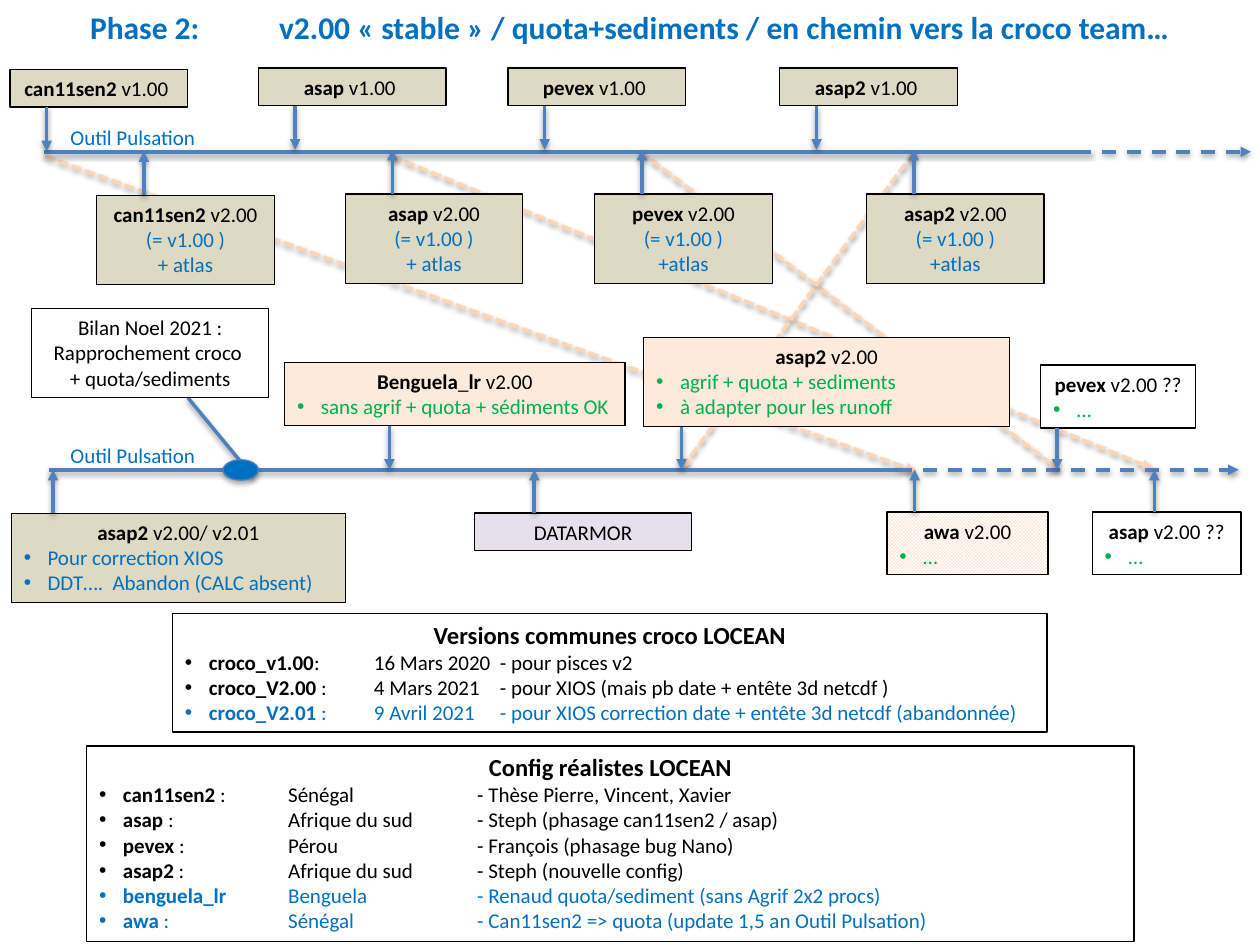
from lxml import etree
from pptx import Presentation
from pptx.dml.color import RGBColor
from pptx.enum import dml, shapes, text
from pptx.oxml import ns
from pptx.util import Cm, Pt

BLACK, BLUE, GREEN, WHITE = "000000", "0070C0", "00B050", "FFFFFF"
AXIS, PEACH, CREAM, SAND, LILAC = "4F81BD", "FCD5B5", "FDEADA", "DDD9C3", "E6E0EC"
INDENT = Cm(0.48)


def colour(value):
    return RGBColor.from_string(value)


def add_element(parent, tag, **attributes):
    return etree.SubElement(parent, ns.qn(tag), attributes)


def add_para(frame, runs, tint=BLACK, size=12, bullet=False, align=None):
    para = frame.paragraphs[0]
    if para.runs:
        para = frame.add_paragraph()
    para.alignment = align or text.PP_ALIGN.LEFT
    if bullet:
        properties = para._p.get_or_add_pPr()
        properties.set("marL", str(INDENT))
        properties.set("indent", str(-INDENT))
        add_element(properties, "a:buFont", typeface="Arial")
        add_element(properties, "a:buChar", char="•")
    for words, bold in runs:
        span = para.add_run()
        span.text = words
        span.font.name = "Calibri"
        span.font.size = Pt(size)
        span.font.bold = bold
        span.font.color.rgb = colour(tint)


def add_centred(frame, runs, tint=BLACK, size=12):
    add_para(frame, runs, tint, size, align=text.PP_ALIGN.CENTER)


def add_box(page, left, top, width, height, fill=None, alpha=None):
    box = page.shapes.add_shape(
        shapes.MSO_SHAPE.RECTANGLE, Cm(left), Cm(top), Cm(width), Cm(height))
    box.shadow.inherit = False
    box.line.color.rgb = colour(BLACK)
    box.line.width = Pt(0.75)
    if fill:
        box.fill.solid()
        box.fill.fore_color.rgb = colour(fill)
    else:
        box.fill.background()
    if alpha:
        shade = box._element.spPr.find(ns.qn("a:solidFill"))[0]
        add_element(shade, "a:alpha", val=str(alpha * 1000))
    box.text_frame.vertical_anchor = text.MSO_ANCHOR.TOP
    return box


def add_line(page, start, end, tint=AXIS, dash=None, arrow=True):
    line = page.shapes.add_connector(
        shapes.MSO_CONNECTOR.STRAIGHT, Cm(start[0]), Cm(start[1]), Cm(end[0]), Cm(end[1]))
    line.line.color.rgb = colour(tint)
    line.line.width = Pt(2)
    if dash:
        line.line.dash_style = dash
    if arrow:
        add_element(line.line._get_or_add_ln(), "a:tailEnd", type="triangle")


def add_label(page, left, top, width, height):
    box = page.shapes.add_textbox(Cm(left), Cm(top), Cm(width), Cm(height))
    box.text_frame.word_wrap = True
    return box.text_frame


def add_title(page, left, top, width, height):
    frame = add_label(page, left, top, width, height)
    frame.vertical_anchor = text.MSO_ANCHOR.MIDDLE
    words = "Phase 2:\t\tv2.00 «\u00a0stable\u00a0» / quota+sediments / en chemin vers la croco team…"
    add_centred(frame, [(words, True)], BLUE, 18)


def add_axis(page, left, top, solid, gap, dashed):
    add_line(page, (left, top), (left + solid, top), arrow=False)
    start = left + solid + gap
    add_line(page, (start, top), (start + dashed, top), dash=dml.MSO_LINE.DASH)
    frame = add_label(page, 1.17, top - 0.68, 3.05, 0.76)
    add_para(frame, [("Outil Pulsation", False)], BLUE)


def add_version_pair(page, left, top, width, name, atlas):
    first = add_box(page, left, top, width, 0.76, SAND)
    add_centred(first.text_frame, [(name, True), (" v1.00 ", False)])
    second = add_box(page, left + 1.75, top + 2.54, 3.58, 1.8, SAND)
    add_centred(second.text_frame, [(name, True), (" v2.00", False)])
    for words in ("(= v1.00 )", atlas):
        add_centred(second.text_frame, [(words, False)], BLUE)
    add_line(page, (left + 0.74, top + 0.76), (left + 0.74, top + 1.65))
    add_line(page, (left + 2.7, top + 2.54), (left + 2.7, top + 1.65))


def add_step(page, left, top, width, height, fill, heading, bullets, tint, arrow_x, axis_y):
    box = add_box(page, left, top, width, height, fill)
    add_centred(box.text_frame, heading)
    for words in bullets:
        add_para(box.text_frame, [(words, False)], tint, bullet=True)
    edge = top if top > axis_y else top + height
    add_line(page, (arrow_x, edge), (arrow_x, axis_y))
    return box


def add_lower_timeline(page, left, top):
    add_axis(page, left, top, 17.12, 0, 6.86)
    v2 = (" v2.00", False)
    doubtful = (" v2.00 ??", False)
    steps = [
        (4.75, -2.16, 6.86, 1.27, CREAM,
         [("Benguela", True), ("_", False), ("lr", True), v2],
         ["sans agrif + quota + sédiments OK"], GREEN, 6.86),
        (11.99, -2.67, 7.37, 1.8, CREAM, [("asap2", True), v2],
         ["agrif + quota + sediments", "à adapter pour les runoff"], GREEN, 12.75),
        (8.58, 0.87, 4.37, 0.76, LILAC, [("DATARMOR", False)], [], GREEN, 9.78),
        (-0.76, 0.88, 6.73, 1.8, SAND, [("asap2", True), (" v2.00/ v2.01", False)],
         ["Pour correction XIOS", "DDT….  Abandon (CALC absent)"], BLUE, 0.08),
        (21.03, 0.85, 3, 1.27, None, [("asap", True), doubtful], ["…"], GREEN, 22.28),
        (19.99, -2.11, 3.12, 1.27, WHITE, [("pevex", True), doubtful], ["…"], GREEN, 20.32),
    ]
    for x, y, width, height, fill, heading, bullets, tint, arrow_x in steps:
        add_step(page, left + x, top + y, width, height, fill,
                 heading, bullets, tint, left + arrow_x, top)
    awa = add_step(page, left + 16.89, top + 0.85, 3.25, 1.27, WHITE,
                   [("awa", True), v2], ["…"], GREEN, left + 17.45, top)
    awa.fill.patterned()
    awa.fill.pattern = dml.MSO_PATTERN.SMALL_CHECKER_BOARD
    awa.fill.fore_color.rgb = colour(PEACH)
    awa.fill.back_color.rgb = colour(WHITE)


def add_review(page, left, top):
    add_line(page, (left + 4.47, top + 3.4), (left + 3.15, top + 1.8), arrow=False)
    marker = page.shapes.add_shape(
        shapes.MSO_SHAPE.OVAL, Cm(left + 3.86), Cm(top + 3.05), Cm(0.71), Cm(0.41))
    marker.fill.solid()
    marker.fill.fore_color.rgb = colour(BLUE)
    marker.line.color.rgb = colour("4B7EBC")
    marker.line.width = Pt(0.75)
    box = add_box(page, left, top, 4.78, 1.8, WHITE, 64)
    for words in ("Bilan Noel 2021 :", "Rapprochement croco ", "+ quota/sediments"):
        add_centred(box.text_frame, [(words, False)])


def add_panel(page, left, top, width, height, heading, rows):
    box = add_box(page, left, top, width, height, WHITE, 64)
    add_centred(box.text_frame, [(heading, True)], size=14)
    for name, details, tint in rows:
        add_para(box.text_frame, [(name, True), (details, False)], tint, bullet=True)


def main():
    deck = Presentation()
    deck.slide_width, deck.slide_height = Cm(25.4), Cm(19.05)
    page = deck.slides.add_slide(deck.slide_layouts[6])
    links = [((7.9, 3.15), (23.24, 9.45)), ((12.9, 3.05), (21.36, 9.47)),
             ((0.91, 3.15), (18.47, 9.5)), ((18.42, 3.07), (13.74, 9.45))]
    for start, end in links:
        add_line(page, start, end, PEACH, dml.MSO_LINE.SQUARE_DOT)
    add_title(page, 0, 0, 25.4, 1.09)
    add_axis(page, 0.89, 3.06, 21.11, 0.22, 3)
    pairs = [(0.2, 1.4, 3.58, "can11sen2", "+ atlas"), (5.21, 1.37, 3.78, "asap", "+ atlas"),
             (10.24, 1.37, 3.58, "pevex", "+atlas"), (15.72, 1.37, 3.58, "asap2", "+atlas")]
    for pair in pairs:
        add_version_pair(page, *pair)
    add_lower_timeline(page, 0.99, 9.47)
    add_panel(page, 1.75, 15.04, 21.11, 3.94, "Config réalistes LOCEAN", [
        ("can11sen2", " :\tSénégal\t\t- Thèse Pierre, Vincent, Xavier", BLACK),
        ("asap", " :\t \tAfrique du sud\t\t- Steph (phasage can11sen2 / asap)", BLACK),
        ("pevex", " :\t \tPérou\t\t\t- François (phasage bug Nano)", BLACK),
        ("asap2", " :\t \tAfrique du sud\t\t- Steph (nouvelle config)", BLACK),
        ("benguela_lr", "\tBenguela\t\t- Renaud quota/sediment (sans Agrif 2x2 procs)", BLUE),
        ("awa", " :\t\tSénégal\t\t- Can11sen2 => quota (update 1,5 an Outil Pulsation)", BLUE)])
    add_panel(page, 3.48, 12.37, 17.63, 2.39, "Versions communes croco LOCEAN", [
        ("croco_v1.00", ":\t16 Mars 2020\t- pour pisces v2", BLACK),
        ("croco_V2.00 ", ":\t4 Mars 2021\t- pour XIOS (mais pb date + entête 3d netcdf )", BLACK),
        ("croco_V2.01 ",
         ":\t9 Avril 2021 \t- pour XIOS correction date + entête 3d netcdf (abandonnée)", BLUE)])
    add_review(page, 0.64, 6.22)
    deck.save("out.pptx")


if __name__ == "__main__":
    main()
